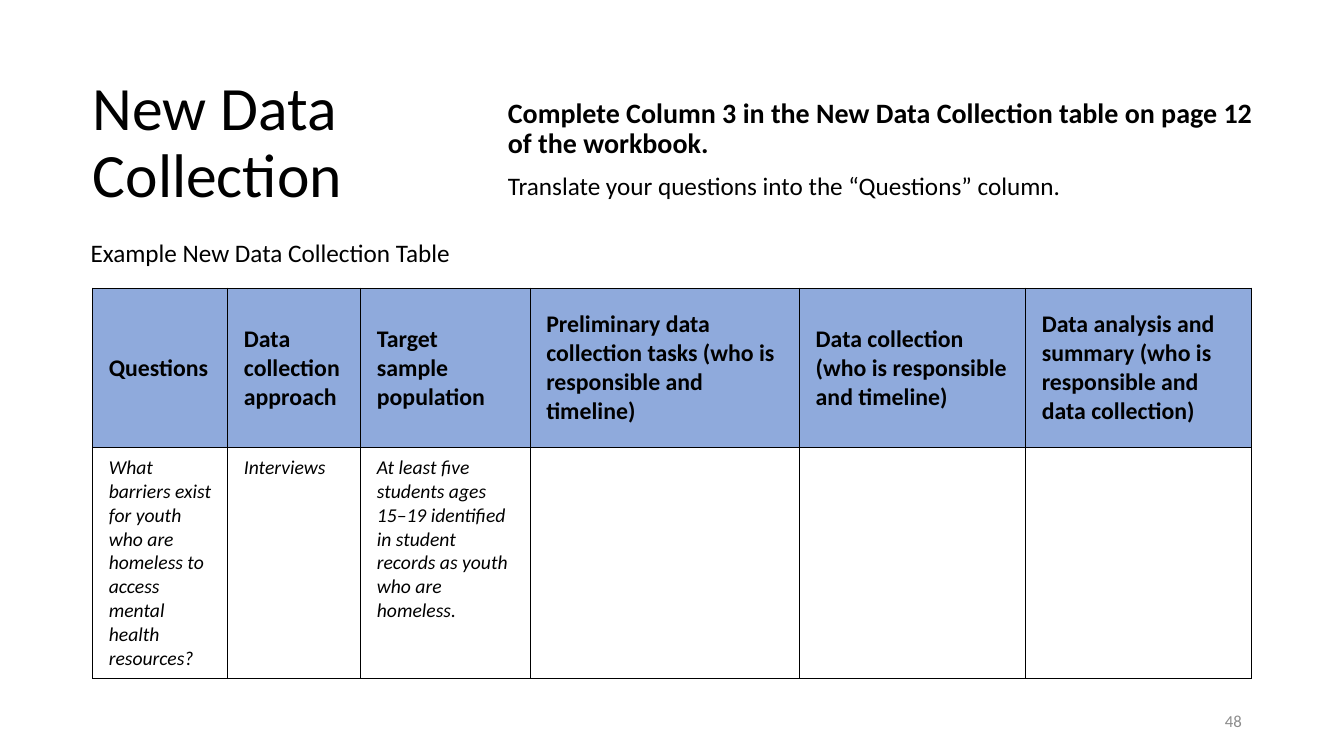
from lxml import etree
from pptx import Presentation
from pptx.dml.color import RGBColor
from pptx.enum import text as t
from pptx.oxml.ns import qn
from pptx.util import Pt

HUES = {"ink": "000000", "head": "8FAADC", "page": "8C8C8C"}
MID, TOP = t.MSO_ANCHOR.MIDDLE, t.MSO_ANCHOR.TOP
LEFT, RIGHT = t.PP_ALIGN.LEFT, t.PP_ALIGN.RIGHT


def write(par, words, size, hue="ink", align=LEFT, **style):
    par.text = words
    par.alignment = align
    looks = {"name": "Calibri", "size": Pt(size), "bold": False, **style}
    for key, val in looks.items():
        setattr(par.font, key, val)
    par.font.color.rgb = RGBColor.from_string(HUES[hue])


def place(shape, box, anchor):
    for key, val in zip(("left", "top", "width", "height"), box):
        setattr(shape, key, Pt(val))
    frame = shape.text_frame
    frame.auto_size = t.MSO_AUTO_SIZE.NONE
    frame.word_wrap = True
    frame.vertical_anchor = anchor
    return frame


deck = Presentation()
deck.slide_width, deck.slide_height = Pt(960), Pt(540)
slide = deck.slides.add_slide(deck.slide_layouts[5])

# Title
frame = place(slide.shapes.title, (66.24, 46.08, 280, 113.76), MID)
frame.margin_left = 0
write(frame.paragraphs[0], "New Data Collection", 44)
frame.paragraphs[0].line_spacing = 0.9

# Task
box = slide.shapes.add_textbox(0, 0, 0, 0)
frame = place(box, (355.68, 50.4, 546.48, 113.76), MID)
task, hint = frame.paragraphs[0], frame.add_paragraph()
write(task, "Complete Column 3 in the New Data Collection table on page 12 of the workbook.", 20, bold=True)
write(hint, "Translate your questions into the “Questions” column.", 18)
hint.space_before = Pt(10)
for par in (task, hint):
    par.line_spacing = 0.9

# Table label and page number
labels = [
    ("Example New Data Collection Table", (57.6, 166.32, 345.6, 30.24), TOP, 18, "ink", LEFT),
    ("48", (678.24, 500.4, 216, 28.8), MID, 12, "page", RIGHT),
]
for words, area, anchor, size, hue, align in labels:
    frame = place(slide.shapes.add_textbox(0, 0, 0, 0), area, anchor)
    write(frame.paragraphs[0], words, size, hue, align)

# Table
wides = [96.5, 95, 121, 192.5, 161.5, 161.5]
rows = [
    ["Questions", "Data collection approach", "Target sample population",
     "Preliminary data collection tasks (who is responsible and timeline)",
     "Data collection (who is responsible and timeline)",
     "Data analysis and summary (who is responsible and data collection)"],
    ["What barriers exist for youth who are homeless to access mental health resources?",
     "Interviews",
     "At least five students ages 15–19 identified in student records as youth who are homeless.",
     "", "", ""],
]
looks = [{"size": 17, "bold": True}, {"size": 14, "italic": True}]
pads = {"margin_left": 11.5, "margin_right": 11.5, "margin_top": 5.75, "margin_bottom": 5.75}
grid = slide.shapes.add_table(2, 6, Pt(66.24), Pt(205.92), Pt(sum(wides)), Pt(278.5)).table
grid.horz_banding = False
for col, wide in zip(grid.columns, wides):
    col.width = Pt(wide)
for row, high in zip(grid.rows, (114, 164.5)):
    row.height = Pt(high)

for r, row in enumerate(rows):
    for c, words in enumerate(row):
        cell = grid.cell(r, c)
        for key, val in pads.items():
            setattr(cell, key, Pt(val))
        cell.vertical_anchor = TOP if r else MID
        write(cell.text_frame.paragraphs[0], words, **looks[r])
        # Borders come before the fill in the cell's XML
        props = cell._tc.get_or_add_tcPr()
        for side in ("lnL", "lnR", "lnT", "lnB"):
            line = etree.SubElement(props, qn("a:" + side), w=str(Pt(1)))
            solid = etree.SubElement(line, qn("a:solidFill"))
            etree.SubElement(solid, qn("a:srgbClr"), val=HUES["ink"])
        if r:
            cell.fill.background()
        else:
            cell.fill.solid()
            cell.fill.fore_color.rgb = RGBColor.from_string(HUES["head"])

deck.save("out.pptx")
